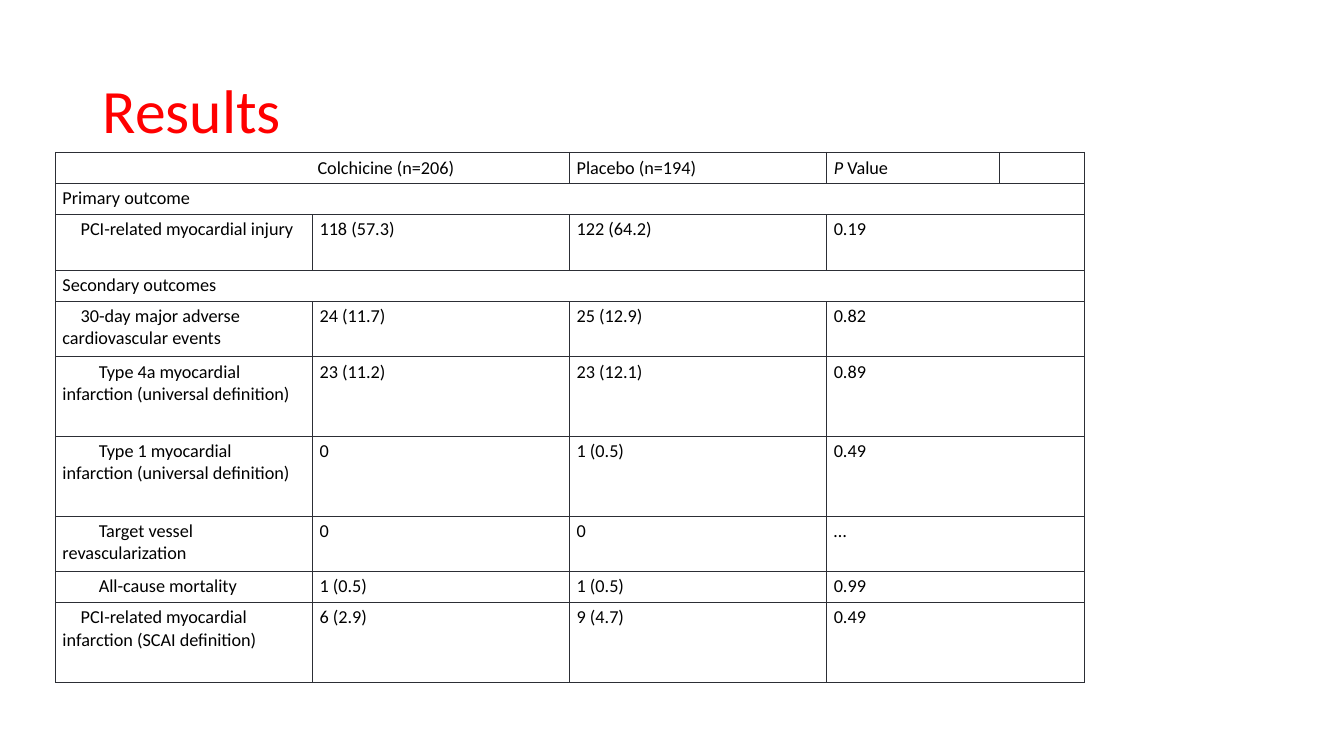
from dataclasses import dataclass

from lxml import etree
from pptx import Presentation, util as u
from pptx.dml import color
from pptx.enum import text
from pptx.oxml import ns

FONT = "Calibri"
BLACK, RED, BORDER = "000000", "FF0000", "2C2E35"
EM = 0.18
COLUMNS = (2.55, 2.55, 2.55, 1.71, 0.84)
HEADER_HEIGHT = 0.31
CELL_FORMAT = dict(margin_left=u.Inches(0.07), margin_right=u.Inches(0.07),
                   margin_top=u.Inches(0.04), margin_bottom=u.Inches(0.04))


@dataclass
class Outcome:
    height: float
    level: int
    label: str
    values: tuple[str, ...] = ()


OUTCOMES = [
    Outcome(0.31, 0, "Primary outcome"),
    Outcome(0.55, 1, "PCI-related myocardial injury", ("118 (57.3)", "122 (64.2)", "0.19")),
    Outcome(0.31, 0, "Secondary outcomes"),
    Outcome(0.55, 1, "30-day major adverse cardiovascular events",
            ("24 (11.7)", "25 (12.9)", "0.82")),
    Outcome(0.79, 2, "Type 4a myocardial infarction (universal definition)",
            ("23 (11.2)", "23 (12.1)", "0.89")),
    Outcome(0.79, 2, "Type 1 myocardial infarction (universal definition)",
            ("0", "1 (0.5)", "0.49")),
    Outcome(0.55, 2, "Target vessel revascularization", ("0", "0", "…")),
    Outcome(0.31, 2, "All-cause mortality", ("1 (0.5)", "1 (0.5)", "0.99")),
    Outcome(0.79, 1, "PCI-related myocardial infarction (SCAI definition)",
            ("6 (2.9)", "9 (4.7)", "0.49")),
]


def rgb(value: str) -> color.RGBColor:
    return color.RGBColor.from_string(value)


def set_format(target, values: dict) -> None:
    for name, value in values.items():
        setattr(target, name, value)


def add_run(p, words: str, size: float, fill: str, italic: bool = False) -> None:
    r = p.add_run()
    r.text = words
    set_format(r.font, dict(name=FONT, size=u.Pt(size), italic=italic))
    r.font.color.rgb = rgb(fill)


def style_cell(cell) -> None:
    set_format(cell, CELL_FORMAT)
    tc_pr = cell._tc.get_or_add_tcPr()
    for side in "LRTB":
        ln = etree.SubElement(tc_pr, ns.qn(f"a:ln{side}"), w=str(u.Pt(0.5)))
        solid = etree.SubElement(ln, ns.qn("a:solidFill"))
        etree.SubElement(solid, ns.qn("a:srgbClr"), val=BORDER)
    cell.fill.background()
    p = cell.text_frame.paragraphs[0]
    etree.SubElement(p._p, ns.qn("a:endParaRPr"), sz="1300")


def write_cell(cell, words: str, first_line: float = 0, italic: str = "") -> None:
    p = cell.text_frame.paragraphs[0]
    p_pr = p._p.get_or_add_pPr()
    p_pr.set("marL", "0")
    p_pr.set("indent", str(u.Inches(first_line)))
    if italic:
        add_run(p, italic, 13, BLACK, True)
    add_run(p, words, 13, BLACK)


def add_title(s) -> None:
    sp = s.shapes.add_textbox(*map(u.Inches, (0.92, 0.4, 11.5, 1.45)))
    tf = sp.text_frame
    set_format(tf, dict(word_wrap=True, vertical_anchor=text.MSO_ANCHOR.MIDDLE))
    p = tf.paragraphs[0]
    p.line_spacing = 0.9
    add_run(p, "Results", 44, RED)


def add_outcome_table(s) -> None:
    heights = [HEADER_HEIGHT] + [o.height for o in OUTCOMES]
    box = (0.55, 1.51, sum(COLUMNS), sum(heights))
    table = s.shapes.add_table(len(heights), len(COLUMNS), *map(u.Inches, box)).table
    set_format(table, dict(first_row=False, horz_banding=False))
    for column, width in zip(table.columns, COLUMNS):
        column.width = u.Inches(width)
    for row, height in zip(table.rows, heights):
        row.height = u.Inches(height)
    for cell in table.iter_cells():
        style_cell(cell)

    table.cell(0, 0).merge(table.cell(0, 1))
    write_cell(table.cell(0, 0), "Colchicine (n=206)", 2.53)
    write_cell(table.cell(0, 2), "Placebo (n=194)")
    write_cell(table.cell(0, 3), "\N{NO-BREAK SPACE}Value", italic="P")
    for col in (0, 2, 3):
        table.cell(0, col).vertical_anchor = text.MSO_ANCHOR.MIDDLE

    for row, outcome in enumerate(OUTCOMES, 1):
        merge_from = 3 if outcome.values else 0
        table.cell(row, merge_from).merge(table.cell(row, 4))
        write_cell(table.cell(row, 0), outcome.label, outcome.level * EM)
        for col, value in enumerate(outcome.values, 1):
            write_cell(table.cell(row, col), value)


def main() -> None:
    prs = Presentation()
    set_format(prs, dict(slide_width=u.Inches(13.33), slide_height=u.Inches(7.5)))
    s = prs.slides.add_slide(prs.slide_layouts[6])
    add_title(s)
    add_outcome_table(s)
    prs.save("out.pptx")


if __name__ == "__main__":
    main()
